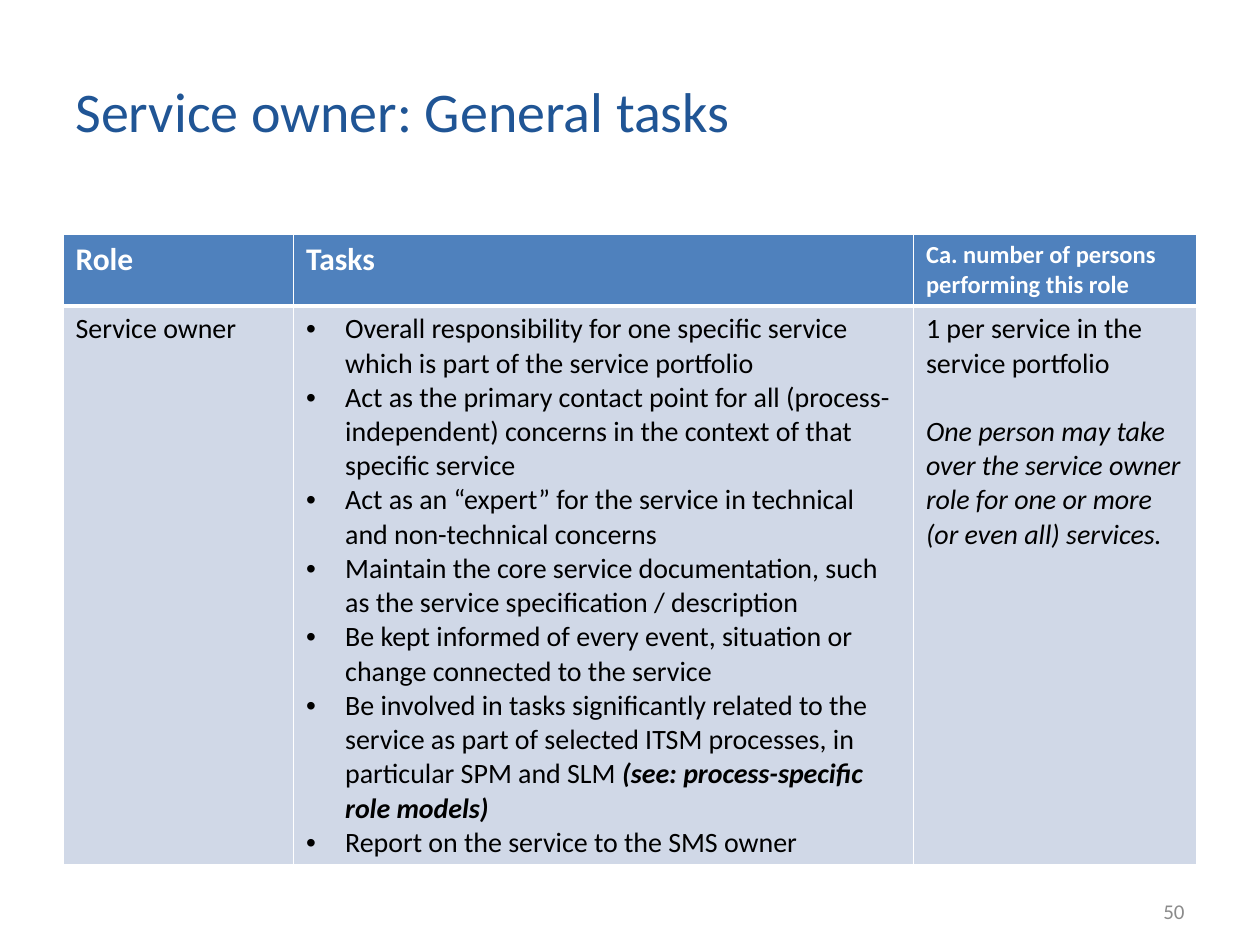
import pptx
import pptx.dml.color
import pptx.enum.text
import pptx.oxml
import pptx.oxml.ns
import pptx.util
from pptx.util import Inches

ALIGN = pptx.enum.text.PP_ALIGN
BLUE, PALE, WHITE, BLACK = "4F81BD", "D0D8E7", "FFFFFF", "000000"

COLUMN_WIDTHS = [1.83, 4.92, 2.25]
ROW_HEIGHTS = [0.56, 4.44]
HEADINGS = [
    ("Role", 18),
    ("Tasks", 18),
    ("Ca. number of persons performing this role", 14),
]
TASKS = [
    "Overall responsibility for one specific service which is part of the service portfolio",
    "Act as the primary contact point for all (process-independent) concerns "
    "in the context of that specific service",
    "Act as an “expert” for the service in technical and non-technical concerns",
    "Maintain the core service documentation, such as the service specification / description",
    "Be kept informed of every event, situation or change connected to the service",
    "Be involved in tasks significantly related to the service as part of selected "
    "ITSM processes, in particular SPM and SLM ",
    "Report on the service to the SMS owner",
]
ROLE_MODELS_TASK = 5


def rgb(color):
    return pptx.dml.color.RGBColor.from_string(color)


def add_run(paragraph, text, size, color, **formats):
    run = paragraph.add_run()
    run.text = text
    run.font.color.rgb = rgb(color)
    values = {"name": "Calibri", "size": pptx.util.Pt(size), "bold": False, "italic": False}
    for key, value in (values | formats).items():
        setattr(run.font, key, value)


def add_label(slide, box, text, size, color, align=ALIGN.LEFT):
    frame = slide.shapes.add_textbox(*map(Inches, box)).text_frame
    frame.word_wrap = True
    frame.vertical_anchor = pptx.enum.text.MSO_ANCHOR.MIDDLE
    frame.paragraphs[0].alignment = align
    add_run(frame.paragraphs[0], text, size, color)


def add_bullet(paragraph):
    properties = paragraph._p.get_or_add_pPr()
    properties.set("marL", str(Inches(0.31)))
    properties.set("indent", str(-Inches(0.31)))
    namespace = pptx.oxml.ns.nsdecls("a")
    for xml in (
        f'<a:buClr {namespace}><a:srgbClr val="{BLACK}"/></a:buClr>',
        f'<a:buFont {namespace} typeface="Arial"/>',
        f'<a:buChar {namespace} char="•"/>',
    ):
        properties.append(pptx.oxml.parse_xml(xml))


def style_cell(cell, fill, thick_side):
    """Fill a cell and give it white borders, heavier on the side between the rows."""
    properties = cell._tc.get_or_add_tcPr()
    for side in ("lnL", "lnR", "lnT", "lnB"):
        width = pptx.util.Pt(3 if side == thick_side else 0.96)
        properties.append(pptx.oxml.parse_xml(
            f'<a:{side} {pptx.oxml.ns.nsdecls("a")} w="{width}"><a:solidFill>'
            f'<a:srgbClr val="{WHITE}"/></a:solidFill></a:{side}>'))
    cell.fill.solid()
    cell.fill.fore_color.rgb = rgb(fill)


def add_role_table(slide):
    frame = slide.shapes.add_table(
        len(ROW_HEIGHTS), len(COLUMN_WIDTHS), Inches(0.5), Inches(1.86),
        Inches(sum(COLUMN_WIDTHS)), Inches(sum(ROW_HEIGHTS)))
    table = frame.table
    table.first_row = table.horz_banding = False
    for column, width in zip(table.columns, COLUMN_WIDTHS):
        column.width = Inches(width)
    for row, height in zip(table.rows, ROW_HEIGHTS):
        row.height = Inches(height)
    for index, (heading, size) in enumerate(HEADINGS):
        header = table.cell(0, index)
        style_cell(header, BLUE, "lnB")
        add_run(header.text_frame.paragraphs[0], heading, size, WHITE, bold=True)
        style_cell(table.cell(1, index), PALE, "lnT")
    return table


def fill_tasks(frame):
    for index, task in enumerate(TASKS):
        paragraph = frame.add_paragraph() if index else frame.paragraphs[0]
        add_bullet(paragraph)
        add_run(paragraph, task, 16, BLACK)
        if index == ROLE_MODELS_TASK:
            add_run(paragraph, "(see: process-specific role models)", 16, BLACK,
                    bold=True, italic=True)


def fill_persons(frame):
    add_run(frame.paragraphs[0], "1 per service in the service portfolio", 16, BLACK)
    remark = frame.add_paragraph()
    remark.space_before = pptx.util.Pt(19.5)
    add_run(remark, "One person may take over the service owner role for one or more "
            "(or even all) services.", 16, BLACK, italic=True)


def main():
    presentation = pptx.Presentation()
    presentation.slide_width, presentation.slide_height = Inches(10), Inches(7.5)
    slide = presentation.slides.add_slide(presentation.slide_layouts[6])

    add_label(slide, (0.5, 0.3, 8.04, 1.15), "Service owner: General tasks", 32, "205595")
    role, tasks, persons = (cell.text_frame for cell in add_role_table(slide).rows[1].cells)
    add_run(role.paragraphs[0], "Service owner", 16, BLACK)
    fill_tasks(tasks)
    fill_persons(persons)
    add_label(slide, (7.17, 7.03, 2.33, 0.4), "50", 12, "8B8B8B", ALIGN.RIGHT)

    presentation.save("out.pptx")


if __name__ == "__main__":
    main()
